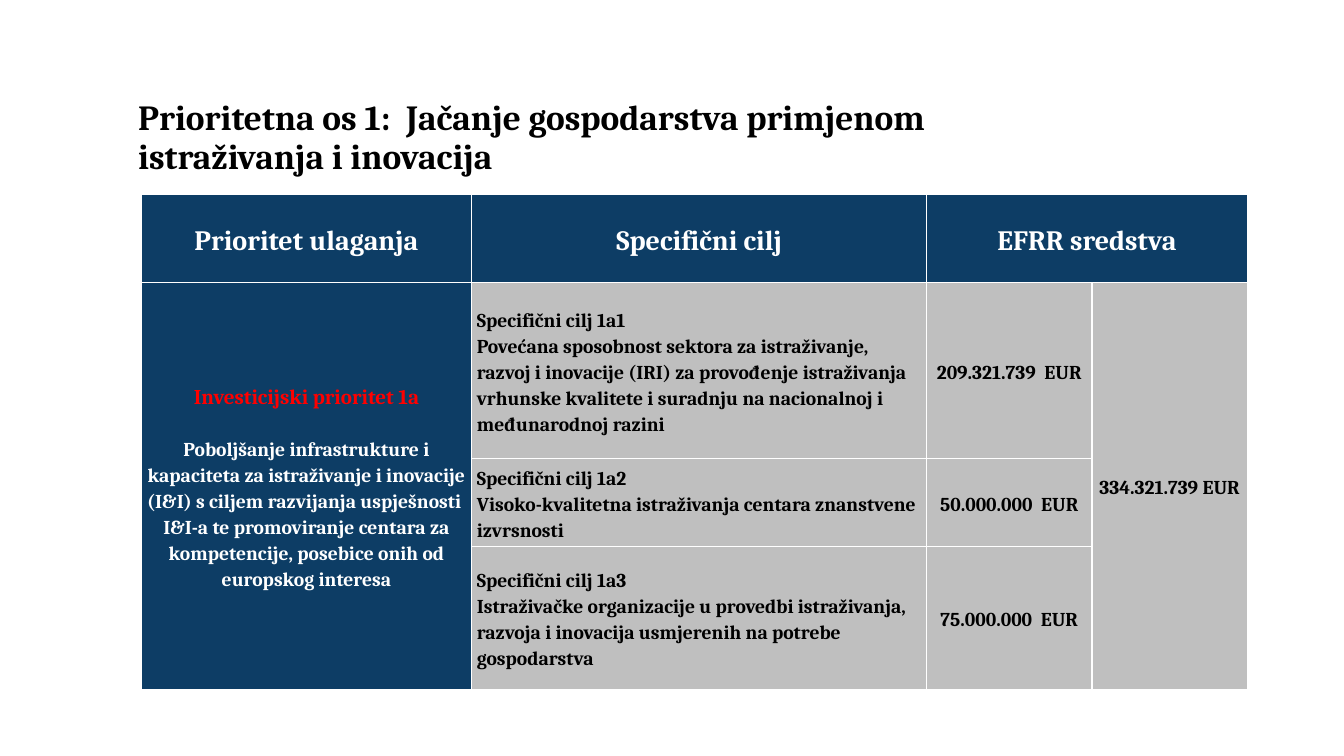
from lxml.etree import SubElement
from pptx import Presentation
from pptx.dml.color import RGBColor
from pptx.enum.text import MSO_ANCHOR as Anchor, MSO_AUTO_SIZE as AutoSize, PP_ALIGN as Align
from pptx.oxml.ns import qn
from pptx.util import Pt

FONT = "Cambria"
NAVY, GREY, WHITE, BLACK, RED = "0D3D65", "BFBFBF", "FFFFFF", "000000", "FF0000"
COLUMN_WIDTHS = [236, 325, 118, 111]
ROW_HEIGHTS = [63, 125.5, 63, 102]
HEADINGS = ["Prioritet ulaganja", "Specifični cilj", "EFRR sredstva"]
PRIORITY = "Investicijski prioritet 1a"
PRIORITY_AIM = ("Poboljšanje infrastrukture i kapaciteta za istraživanje i inovacije (I&I) "
                "s ciljem razvijanja uspješnosti  I&I-a te promoviranje centara za "
                "kompetencije, posebice onih od europskog interesa")
GOALS = [
    ("Specifični cilj 1a1",
     "Povećana sposobnost sektora za istraživanje, razvoj i inovacije (IRI) za provođenje "
     "istraživanja vrhunske kvalitete i suradnju na nacionalnoj i međunarodnoj razini",
     "209.321.739  EUR"),
    ("Specifični cilj 1a2",
     "Visoko-kvalitetna istraživanja centara znanstvene izvrsnosti",
     "50.000.000  EUR"),
    ("Specifični cilj 1a3",
     "Istraživačke organizacije u provedbi istraživanja, razvoja i inovacija usmjerenih "
     "na potrebe gospodarstva",
     "75.000.000  EUR"),
]
TOTAL = "334.321.739 EUR"


def color(value):
    return RGBColor.from_string(value)


def add_span(para, text, size, ink):
    span = para.add_run()
    span.text = text
    span.font.name = FONT
    span.font.size = Pt(size)
    span.font.bold = True
    span.font.color.rgb = color(ink)


def add_borders(cell):
    properties = cell._tc.get_or_add_tcPr()
    for side in ("a:lnL", "a:lnR", "a:lnT", "a:lnB"):
        line = SubElement(properties, qn(side), w=str(Pt(1)))
        fill = SubElement(line, qn("a:solidFill"))
        SubElement(fill, qn("a:srgbClr"), val=WHITE)


def fill_cell(cell, fill, lines, align=Align.CENTER, gap=0):
    """Write (text, size, ink) lines, with a gap in points between paragraphs."""
    cell.fill.solid()
    cell.fill.fore_color.rgb = color(fill)
    cell.vertical_anchor = Anchor.MIDDLE
    cell.margin_left = cell.margin_right = Pt(3.6)
    cell.margin_top, cell.margin_bottom = Pt(0.7), Pt(0)
    frame = cell.text_frame
    for index, line in enumerate(lines):
        para = frame.add_paragraph() if index else frame.paragraphs[0]
        para.alignment = align
        para.line_spacing = 1.15
        para.space_before = Pt(gap if index else 0)
        add_span(para, *line)


def place_title(slide, left, top, width, height):
    title = slide.shapes.title
    title.left, title.top, title.width, title.height = map(Pt, (left, top, width, height))
    frame = title.text_frame
    frame.auto_size = AutoSize.NONE
    frame.word_wrap = True
    frame.vertical_anchor = Anchor.MIDDLE
    para = frame.paragraphs[0]
    para.alignment = Align.LEFT
    para.line_spacing = 0.9
    add_span(para, "Prioritetna os 1:  Jačanje gospodarstva primjenom istraživanja i inovacija",
             25.2, BLACK)


def add_funding_table(slide, left, top):
    box = map(Pt, (left, top, sum(COLUMN_WIDTHS), sum(ROW_HEIGHTS)))
    table = slide.shapes.add_table(len(ROW_HEIGHTS), len(COLUMN_WIDTHS), *box).table
    for column, width in zip(table.columns, COLUMN_WIDTHS):
        column.width = Pt(width)
    for row, height in zip(table.rows, ROW_HEIGHTS):
        row.height = Pt(height)
    for cell in table.iter_cells():
        add_borders(cell)
    table.cell(0, 2).merge(table.cell(0, 3))
    for column in (0, 3):
        table.cell(1, column).merge(table.cell(3, column))

    for column, heading in enumerate(HEADINGS):
        fill_cell(table.cell(0, column), NAVY, [(heading, 20, WHITE)])
    fill_cell(table.cell(1, 0), NAVY,
              [(PRIORITY, 15, RED), (PRIORITY_AIM, 14, WHITE)], gap=18.6)
    for row, (name, aim, amount) in enumerate(GOALS, start=1):
        fill_cell(table.cell(row, 1), GREY,
                  [(name, 14, BLACK), (aim, 14, BLACK)], Align.LEFT)
        fill_cell(table.cell(row, 2), GREY, [(amount, 14, BLACK)])
    fill_cell(table.cell(1, 3), GREY, [(TOTAL, 14, BLACK)])


def main():
    deck = Presentation()
    deck.slide_width, deck.slide_height = Pt(960), Pt(540)
    slide = deck.slides.add_slide(deck.slide_layouts.get_by_name("Title Only"))
    place_title(slide, 91.5, 54, 695, 90)
    add_funding_table(slide, 101, 139)
    deck.save("out.pptx")


if __name__ == "__main__":
    main()
